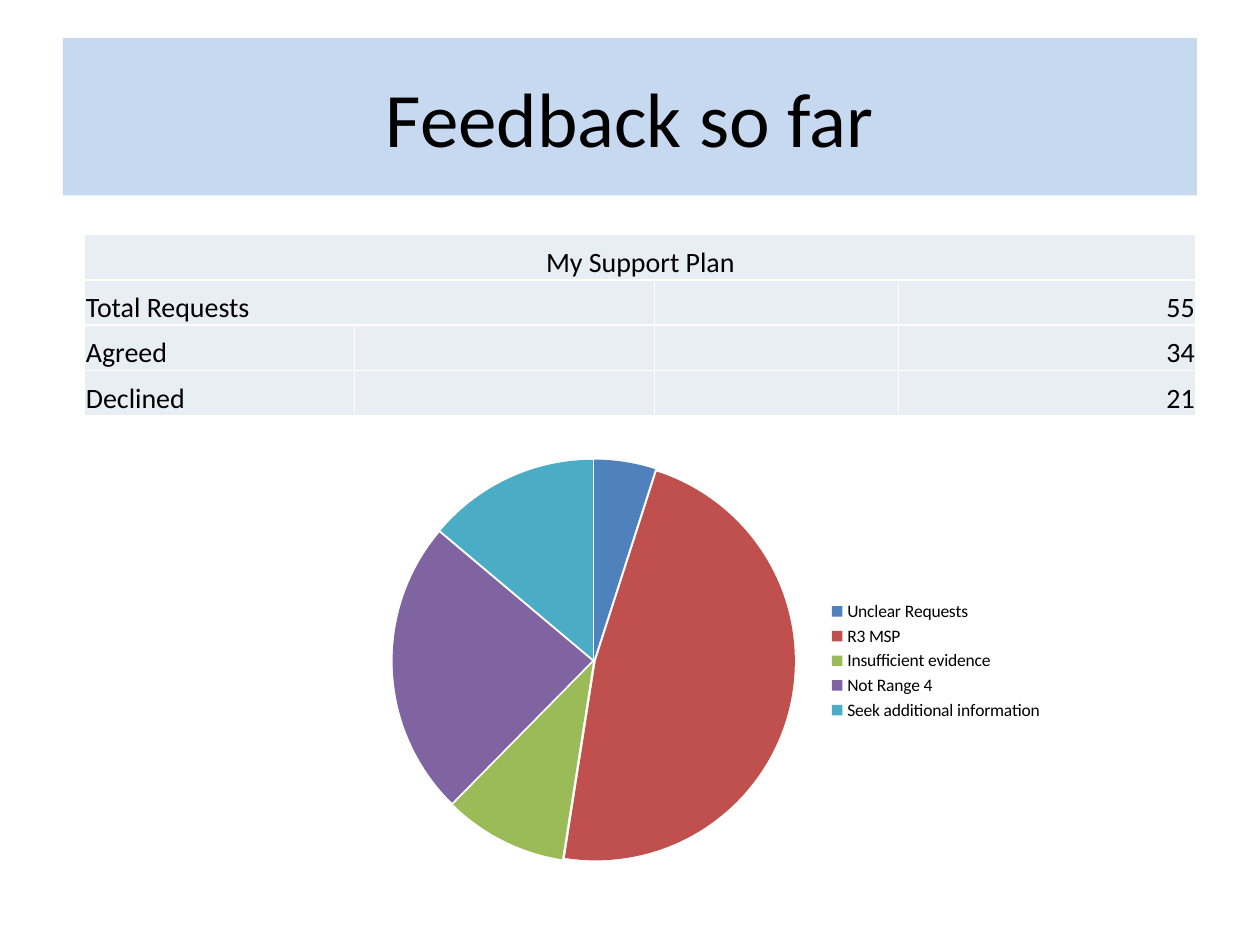
from lxml import etree
from pptx import Presentation
from pptx.chart.data import CategoryChartData
from pptx.dml.color import RGBColor
from pptx.enum.chart import XL_CHART_TYPE as ChartType, XL_LEGEND_POSITION as LegendPosition
from pptx.enum.shapes import MSO_SHAPE as Shape
from pptx.enum.text import MSO_ANCHOR as Anchor, PP_ALIGN as Align
from pptx.oxml.ns import qn
from pptx.util import Pt

FONT = "Calibri"
COLUMN_WIDTHS = [154.1, 171.4, 139.7, 169.9]
ROW_HEIGHT = 25.92
REQUESTS = [("Total Requests", "55"), ("Agreed", "34"), ("Declined", "21")]
REASONS = [
    ("Unclear Requests", 5, "4F81BD"),
    ("R3 MSP", 48, "C0504D"),
    ("Insufficient evidence", 10, "9BBB59"),
    ("Not Range 4", 24, "8064A2"),
    ("Seek additional information", 14, "4BACC6"),
]


def paint(fill, color):
    fill.solid()
    fill.fore_color.rgb = RGBColor.from_string(color)


def set_font(font, size):
    font.name = FONT
    font.size = Pt(size)
    font.color.rgb = RGBColor.from_string("000000")


def write(frame, text, size, align):
    para = frame.paragraphs[0]
    para.text = text
    para.alignment = align
    set_font(para.font, size)


def add_title(page, text):
    box = page.shapes.add_shape(Shape.RECTANGLE, Pt(36), Pt(21.6), Pt(648), Pt(90))
    box.shadow.inherit = False
    paint(box.fill, "C6D9F1")
    box.line.fill.background()
    box.text_frame.vertical_anchor = Anchor.MIDDLE
    write(box.text_frame, text, 44, Align.CENTER)


def style_cell(cell):
    cell.margin_left = cell.margin_right = cell.margin_top = Pt(0.72)
    cell.margin_bottom = Pt(0)
    cell.vertical_anchor = Anchor.BOTTOM
    paint(cell.fill, "E9EDF4")
    # Borders come before the fill in the cell properties
    properties = cell._tc.get_or_add_tcPr()
    for index, side in enumerate(("lnL", "lnR", "lnT", "lnB")):
        border = etree.Element(qn(f"a:{side}"), w=str(Pt(1)))
        fill = etree.SubElement(border, qn("a:solidFill"))
        etree.SubElement(fill, qn("a:srgbClr"), val="FFFFFF")
        properties.insert(index, border)


def add_request_table(page, heading, requests):
    row_count = len(requests) + 1
    frame = page.shapes.add_table(row_count, len(COLUMN_WIDTHS), Pt(48.4), Pt(134),
                                  Pt(sum(COLUMN_WIDTHS)), Pt(ROW_HEIGHT * row_count))
    table = frame.table
    table.first_row = table.horz_banding = False
    for column, width in zip(table.columns, COLUMN_WIDTHS):
        column.width = Pt(width)
    for row in table.rows:
        row.height = Pt(ROW_HEIGHT)
    for cell in table.iter_cells():
        style_cell(cell)

    # The heading spans all columns, the total's label the first two
    table.cell(0, 0).merge(table.cell(0, 3))
    table.cell(1, 0).merge(table.cell(1, 1))
    write(table.cell(0, 0).text_frame, heading, 16, Align.CENTER)
    for row, (label, count) in enumerate(requests, start=1):
        write(table.cell(row, 0).text_frame, label, 16, Align.LEFT)
        write(table.cell(row, 3).text_frame, count, 16, Align.RIGHT)


def add_reason_pie(page, reasons):
    names, values, colors = zip(*reasons)
    data = CategoryChartData()
    data.categories = names
    data.add_series("Series 1", values)
    chart = page.shapes.add_chart(ChartType.PIE, Pt(206.6), Pt(252.7),
                                  Pt(396.7), Pt(249.8), data).chart
    set_font(chart.font, 10)
    chart.has_title = False
    chart.has_legend = True
    chart.legend.position = LegendPosition.RIGHT
    chart.legend.include_in_layout = False
    plot = chart.plots[0]
    plot.vary_by_categories = True
    series = plot.series[0]
    for index, color in enumerate(colors):
        paint(series.points[index].format.fill, color)
    # Slightly separated slices
    explosion = etree.Element(qn("c:explosion"), val="1")
    series._element.find(qn("c:dPt")).addprevious(explosion)


def main():
    deck = Presentation()
    deck.slide_width, deck.slide_height = Pt(720), Pt(540)
    page = deck.slides.add_slide(deck.slide_layouts[6])
    add_title(page, "Feedback so far")
    add_request_table(page, "My Support Plan", REQUESTS)
    add_reason_pie(page, REASONS)
    deck.save("out.pptx")


if __name__ == "__main__":
    main()
